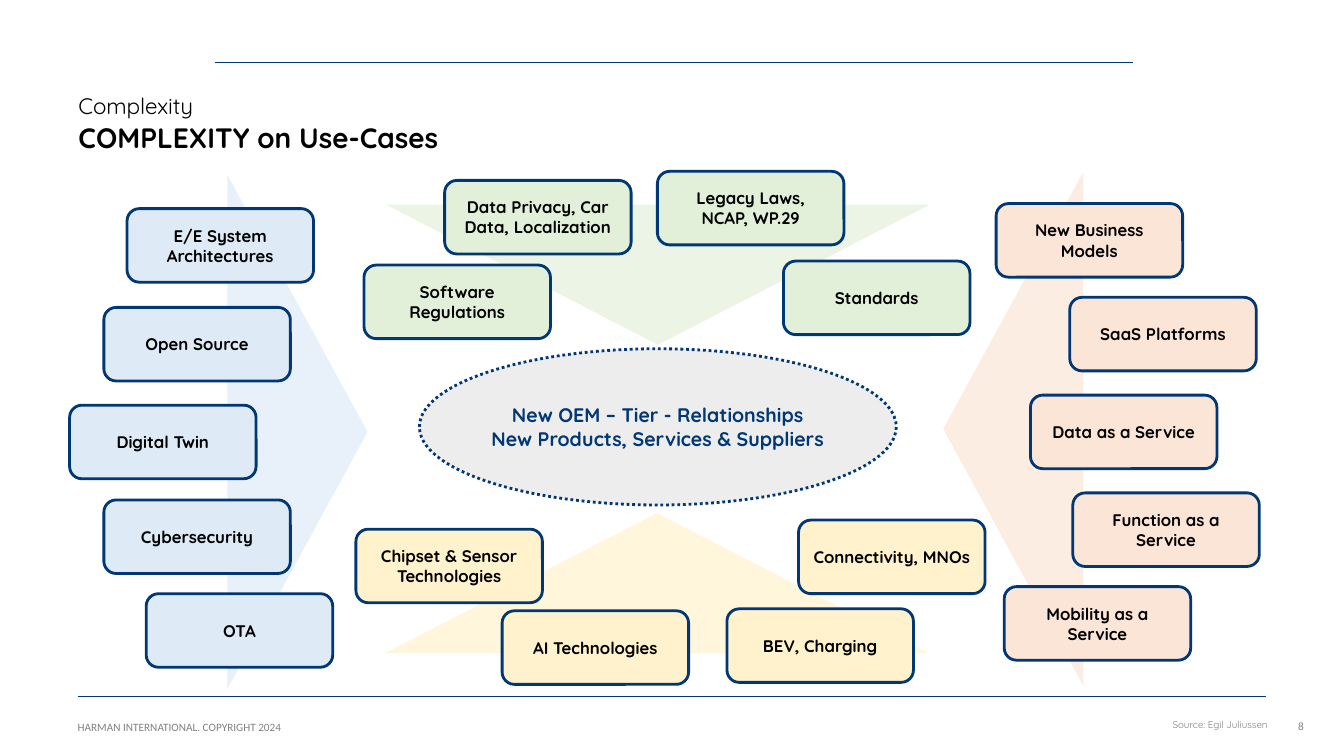
from lxml import etree
from pptx import Presentation
from pptx.dml.color import RGBColor
from pptx.enum.dml import MSO_LINE
from pptx.enum.shapes import MSO_CONNECTOR, MSO_SHAPE
from pptx.enum.text import MSO_ANCHOR, PP_ALIGN
from pptx.oxml.ns import qn
from pptx.util import Emu, Pt

TRIANGLE = MSO_SHAPE.ISOSCELES_TRIANGLE
ROUNDED = MSO_SHAPE.ROUNDED_RECTANGLE
OVAL = MSO_SHAPE.OVAL
STRAIGHT = MSO_CONNECTOR.STRAIGHT
DOTTED = MSO_LINE.ROUND_DOT
LEFT, CENTER, RIGHT = PP_ALIGN.LEFT, PP_ALIGN.CENTER, PP_ALIGN.RIGHT
TOP, MIDDLE = MSO_ANCHOR.TOP, MSO_ANCHOR.MIDDLE

PX = 9144
HEADING_FONT = "Quicksand"
FOOTER_FONT = "Calibri"
COLORS = {
    "navy": "003774",
    "black": "000000",
    "gray": "808080",
    "silver": "EDEDED",
    "blue": "DEEBF7",
    "orange": "FBE5D6",
    "green": "E2F0D9",
    "yellow": "FFF2CC",
}


def px(*lengths):
    return [Emu(length * PX) for length in lengths]


def rgb(name):
    return RGBColor.from_string(COLORS[name])


class SlideBuilder:
    def __init__(self, slide):
        self.shapes = slide.shapes

    def set_lines(self, frame, lines, size, color, bold, font, align, anchor, insets):
        frame.word_wrap = True
        frame.vertical_anchor = anchor
        frame.margin_left = frame.margin_right = Emu(insets[0] * PX)
        frame.margin_top = frame.margin_bottom = Emu(insets[1] * PX)
        for index, line in enumerate(lines):
            paragraph = frame.add_paragraph() if index else frame.paragraphs[0]
            paragraph.text = line
            paragraph.alignment = align
            paragraph.font.name = font
            paragraph.font.size = Pt(size)
            paragraph.font.bold = bold
            paragraph.font.color.rgb = rgb(color)

    def text(self, box, line, size, color="black", bold=False,
             font=HEADING_FONT, align=LEFT, insets=(10, 5), wrap=True):
        frame = self.shapes.add_textbox(*px(*box)).text_frame
        self.set_lines(frame, [line], size, color, bold, font, align, TOP, insets)
        frame.word_wrap = wrap

    def rule(self, left, right, y):
        line = self.shapes.add_connector(STRAIGHT, *px(left, y, right, y))
        line.line.color.rgb = rgb("navy")
        line.line.width = Pt(0.75)
        etree.SubElement(line._element.spPr, qn("a:effectLst"))

    def shape(self, kind, box, color):
        shape = self.shapes.add_shape(kind, *px(*box))
        shape.shadow.inherit = False
        shape.fill.solid()
        shape.fill.fore_color.rgb = rgb(color)
        return shape

    def wedge(self, box, rotation, color):
        wedge = self.shape(TRIANGLE, box, color)
        wedge.rotation = rotation
        wedge.line.fill.background()
        fill = wedge._element.spPr.find(qn("a:solidFill"))
        etree.SubElement(fill[0], qn("a:alpha"), val="67000")

    def bubble(self, kind, box, color, lines, size=12, text_color="black",
               insets=(10, 5)):
        bubble = self.shape(kind, box, color)
        bubble.line.color.rgb = rgb("navy")
        bubble.line.width = Pt(2)
        self.set_lines(bubble.text_frame, lines, size, text_color, True,
                       HEADING_FONT, CENTER, MIDDLE, insets)
        return bubble


WEDGES = [
    ((40, 359, 510, 139), 90, "blue"),
    ((750, 356, 510, 139), 270, "orange"),
    ((383, 203, 539, 139), 180, "green"),
    ((382, 509, 539, 139), 0, "yellow"),
]

USE_CASES = {
    "green": [
        (361, 263, "Software Regulations"),
        (441, 179, "Data Privacy, Car Data, Localization"),
        (652, 170, "Legacy Laws, NCAP, WP.29"),
        (777, 259, "Standards"),
    ],
    "orange": [
        (988, 202, "New Business Models"),
        (1061, 295, "SaaS Platforms"),
        (1022, 392, "Data as a Service"),
        (1064, 489, "Function as a Service"),
        (996, 582, "Mobility as a Service"),
    ],
    "yellow": [
        (721, 604, "BEV, Charging"),
        (792, 516, "Connectivity, MNOs"),
        (498, 606, "AI Technologies"),
        (353, 525, "Chipset & Sensor Technologies"),
    ],
    "blue": [
        (145, 589, "OTA"),
        (103, 496, "Cybersecurity"),
        (69, 402, "Digital Twin"),
        (103, 305, "Open Source"),
        (126, 207, "E/E System Architectures"),
    ],
}


def main():
    deck = Presentation()
    deck.slide_width, deck.slide_height = px(1333, 750)
    page = SlideBuilder(deck.slides.add_slide(deck.slide_layouts[6]))

    page.text((1224, 714, 69, 15), "8", 8, "gray", font=FOOTER_FONT,
              align=RIGHT, insets=(0, 0))
    page.text((77, 715, 495, 15), "HARMAN INTERNATIONAL. COPYRIGHT 2024", 8,
              "gray", font=FOOTER_FONT, insets=(0, 0))
    page.rule(77, 1256, 691)
    page.rule(213, 1124, 62)

    for box, rotation, color in WEDGES:
        page.wedge(box, rotation, color)

    page.text((68, 86, 359, 45), "Complexity", 16)
    page.text((68, 115, 1074, 53), "COMPLEXITY on Use-Cases", 20, bold=True)
    page.text((1149, 708, 118, 22), "Source: Egil Juliussen", 7, "gray",
              align=RIGHT, wrap=False)

    for color, cases in USE_CASES.items():
        for left, top, name in cases:
            page.bubble(ROUNDED, (left, top, 185, 73), color, [name])

    relationships = page.bubble(
        OVAL, (416, 346, 473, 155), "silver",
        ["New OEM – Tier - Relationships",
         "New Products, Services & Suppliers"],
        14, "navy", (0, 5))
    relationships.line.dash_style = DOTTED

    deck.save("out.pptx")


if __name__ == "__main__":
    main()
